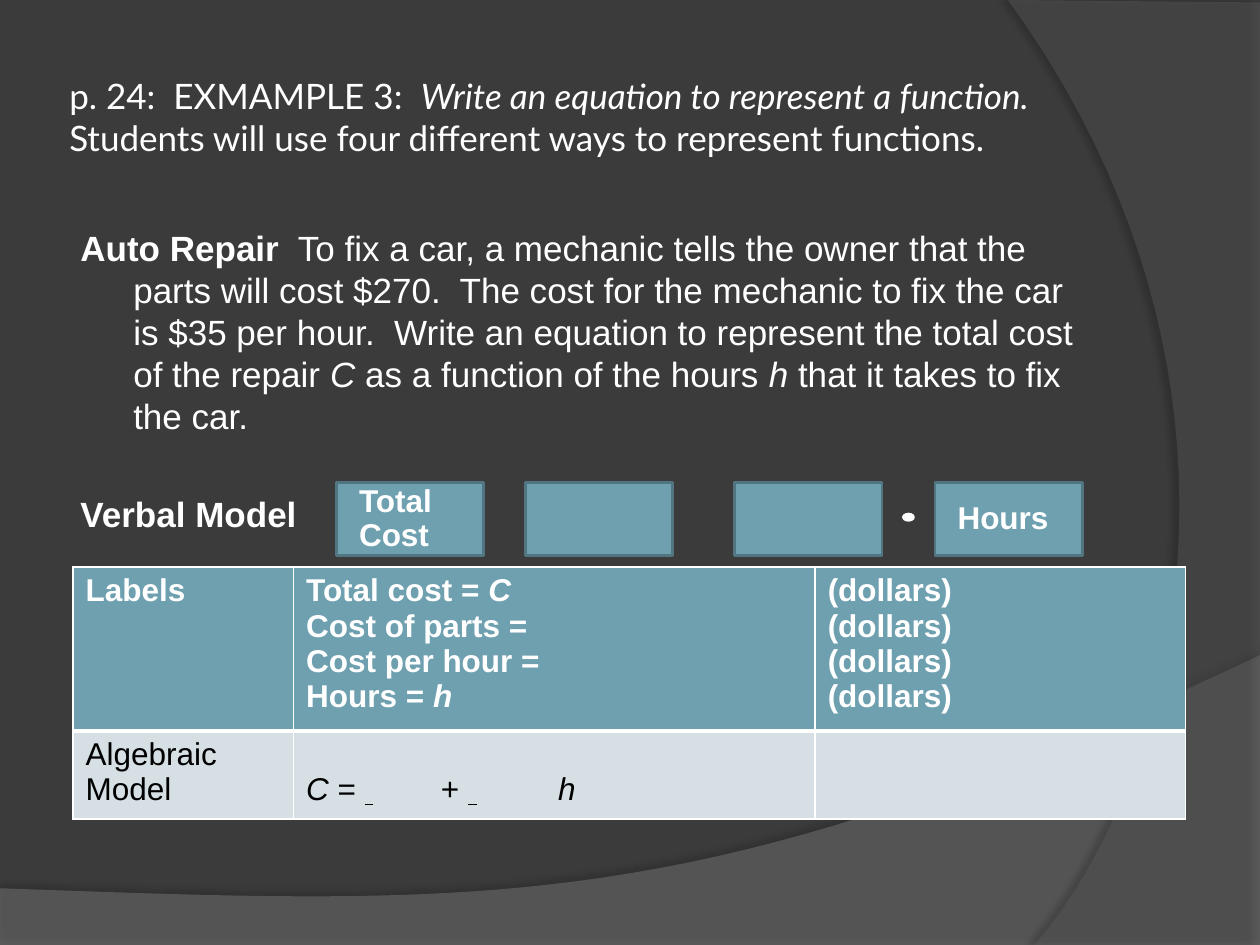
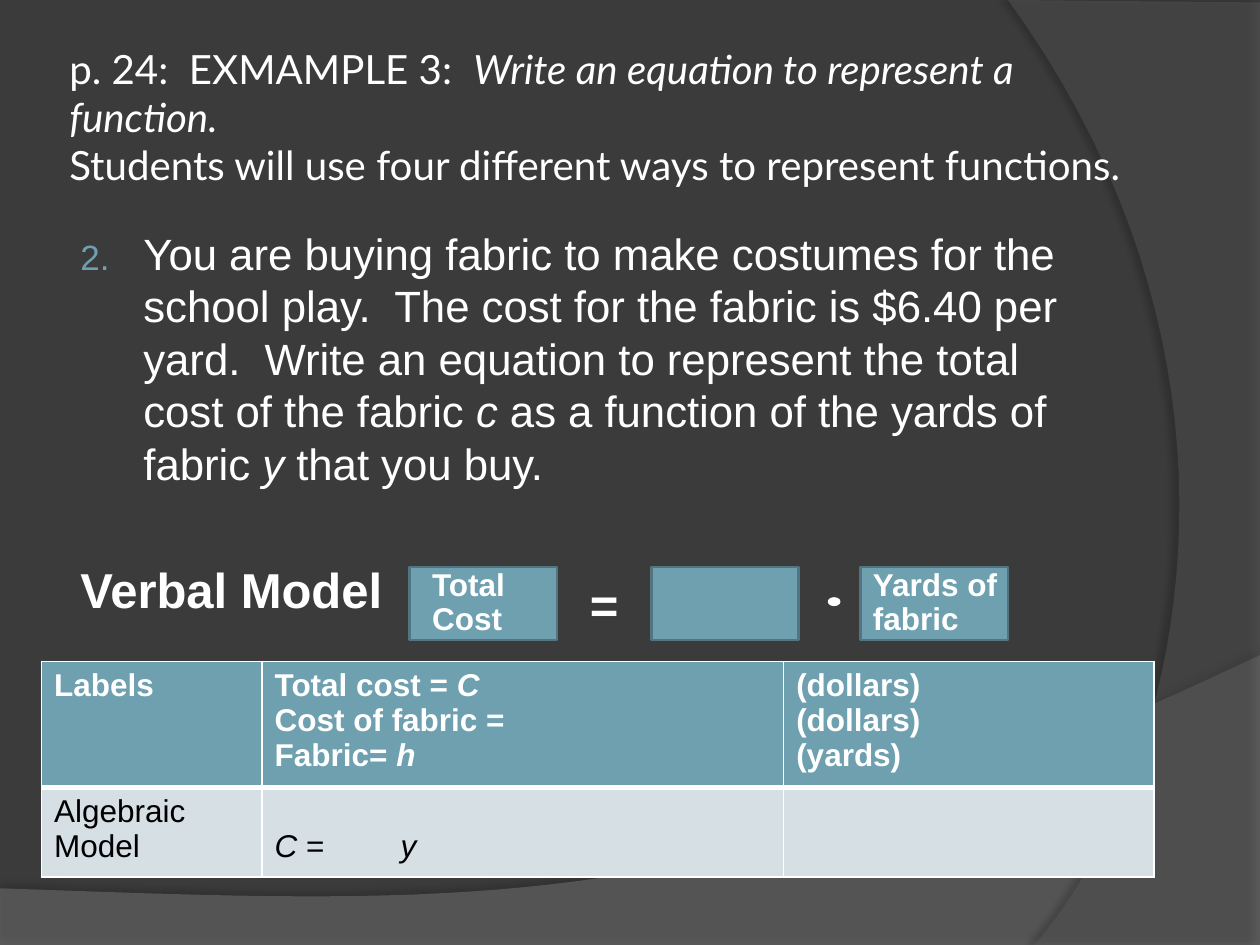
import dataclasses
import typing

import pptx
import pptx.dml.color
import pptx.enum.shapes
import pptx.enum.text
import pptx.oxml
import pptx.oxml.ns
import pptx.util

Inches = pptx.util.Inches
Pt = pptx.util.Pt

BACKGROUND, WHITE, BLACK = "3B3B3B", "FFFFFF", "000000"
TEAL, TEAL_EDGE, PALE = "6EA0B0", "517682", "D5DFE4"
TITLE_FONT, BODY_FONT = "Lato", "Arial"
BOX_WIDTH, BOX_HEIGHT = 1.17, 0.58
COLUMN_WIDTHS = (1.75, 4.14, 2.94)


@dataclasses.dataclass(frozen=True)
class Run:
    text: str
    bold: bool = False
    italic: bool = False
    underline: bool = False


@dataclasses.dataclass(frozen=True)
class Box:
    left: float
    label: str = ""
    inset: float = 0.18


@dataclasses.dataclass(frozen=True)
class Example:
    title_size: float
    title_width: float
    problem: list[Run]
    problem_size: float
    indent: float
    hanging: float
    number: int
    model_size: float
    model_gap: float
    boxes: list[Box]
    box_top: float
    shows_equals: bool
    dot_left: float
    table_left: float
    table_top: float
    row_heights: tuple[float, float]
    quantities: list[list[Run]]
    units: list[str]
    formula: list[Run]


EXAMPLES = [
    Example(
        title_size=20, title_width=8.17,
        problem=[
            Run("Auto Repair", bold=True),
            Run("  To fix a car, a mechanic tells the owner that the parts will cost $270.  "
                "The cost for the mechanic to fix the car is $35 per hour.  Write an equation "
                "to represent the total cost of the repair "),
            Run("C", italic=True),
            Run(" as a function of the hours "),
            Run("h", italic=True),
            Run(" that it takes to fix the car."),
        ],
        problem_size=20, indent=0.46, hanging=0.42, number=0,
        model_size=20, model_gap=32,
        boxes=[Box(2.67, "Total Cost"), Box(4.17), Box(5.83), Box(7.42, "Hours")],
        box_top=3.83, shows_equals=False, dot_left=7.17,
        table_left=0.58, table_top=4.5, row_heights=(1.21, 0.67),
        quantities=[
            [Run("Total cost = ", True), Run("C", True, True)],
            [Run("Cost of parts =", True)],
            [Run("Cost per hour =", True)],
            [Run("Hours = ", True), Run("h", True, True)],
        ],
        units=["(dollars)"] * 4,
        formula=[
            Run("C", italic=True), Run(" = "), Run(" \t", underline=True),
            Run(" + "), Run(" \t", underline=True), Run("h", italic=True),
        ],
    ),
    Example(
        title_size=23, title_width=8.83,
        problem=[
            Run("You are buying fabric to make costumes for the school play.  The cost for the "
                "fabric is $6.40 per yard.  Write an equation to represent the total cost of "
                "the fabric "),
            Run("c", italic=True),
            Run(" as a function of the yards of fabric "),
            Run("y", italic=True),
            Run(" that you buy."),
        ],
        problem_size=25, indent=0.54, hanging=0.5, number=2,
        model_size=28, model_gap=40,
        boxes=[Box(3.25, "Total Cost"), Box(5.17), Box(6.83, "Yards of fabric", 0.1)],
        box_top=4.5, shows_equals=True, dot_left=6.58,
        table_left=0.33, table_top=5.25, row_heights=(0.99, 0.71),
        quantities=[
            [Run("Total cost = ", True), Run("C", True, True)],
            [Run("Cost of fabric =", True)],
            [Run("Fabric= ", True), Run("h", True, True)],
        ],
        units=["(dollars)", "(dollars)", "(yards)"],
        formula=[Run("C ", italic=True), Run("= "), Run("\t"), Run("y", italic=True)],
    ),
]


def rgb(color: str) -> pptx.dml.color.RGBColor:
    return pptx.dml.color.RGBColor.from_string(color)


def element(xml: str) -> typing.Any:
    """Parse one drawing element, adding its namespace."""
    name, rest = xml[1:].split(" ", 1)
    return pptx.oxml.parse_xml(f"<{name} {pptx.oxml.ns.nsdecls('a')} {rest}")


def add_runs(paragraph: typing.Any, runs: list[Run], size: float,
             color: str = WHITE, font: str = BODY_FONT) -> None:
    for item in runs:
        run = paragraph.add_run()
        run.text = item.text
        run.font.name, run.font.size = font, Pt(size)
        run.font.bold, run.font.italic = item.bold, item.italic
        run.font.underline = item.underline
        run.font.color.rgb = rgb(color)


def add_text_frame(slide: typing.Any, left: float, top: float,
                   width: float, height: float) -> typing.Any:
    box = slide.shapes.add_textbox(Inches(left), Inches(top), Inches(width), Inches(height))
    box.text_frame.word_wrap = True
    return box.text_frame


def set_indent(paragraph: typing.Any, left: float, first: float) -> typing.Any:
    properties = paragraph._p.get_or_add_pPr()
    properties.set("marL", str(Inches(left)))
    properties.set("indent", str(Inches(first)))
    return properties


# Curved background bands

def curve(start: tuple, first: tuple, second: tuple, end: tuple, steps: int = 40) -> list[tuple]:
    """Points along a cubic curve, without its start."""
    points = []
    for step in range(1, steps + 1):
        t = step / steps
        weights = ((1 - t) ** 3, 3 * t * (1 - t) ** 2, 3 * t * t * (1 - t), t ** 3)
        corners = (start, first, second, end)
        points.append(tuple(sum(w * c[axis] for w, c in zip(weights, corners))
                            for axis in (0, 1)))
    return points


def add_band(slide: typing.Any, points: list[tuple], color: str, opacity: int,
             shadow_opacity: int, distance: float, direction: int) -> None:
    vertices = [(Inches(x), Inches(y)) for x, y in points]
    builder = slide.shapes.build_freeform(*vertices[0])
    builder.add_line_segments(vertices[1:], close=True)
    band = builder.convert_to_shape()
    band.fill.solid()
    band.fill.fore_color.rgb = rgb(color)
    band.line.fill.background()
    band.shadow.inherit = False
    properties = band._element.spPr
    fill_color = properties.find(".//" + pptx.oxml.ns.qn("a:srgbClr"))
    fill_color.append(element(f'<a:alpha val="{opacity * 1000}"/>'))
    properties.find(pptx.oxml.ns.qn("a:effectLst")).append(element(
        f'<a:outerShdw blurRad="{Pt(4)}" dist="{Pt(distance)}" dir="{direction * 60000}" '
        f'algn="ctr" rotWithShape="0"><a:srgbClr val="{BLACK}">'
        f'<a:alpha val="{shadow_opacity * 1000}"/></a:srgbClr></a:outerShdw>'))


def add_background(slide: typing.Any) -> None:
    bottom = [(0, 7.05), (0, 7.5), (10, 7.5), (10, 5.2)]
    bottom += curve((10, 5.2), (5.59, 7.29), (3.91, 7.19), (0, 7.05))
    add_band(slide, bottom, "7F7F7F", 45, 35, 3.5, 270)
    side = [(10, 0.02), (10, 7.5), (8.21, 7.5)]
    side += curve((8.21, 7.5), (9.35, 6.19), (10.18, 3), (8, 0))
    add_band(slide, side, "5E5E5E", 40, 45, 4, 180)


# Title and problem text

def add_title(slide: typing.Any, example: Example) -> None:
    frame = add_text_frame(slide, 0.5, 0.3, example.title_width, 1.25)
    frame.vertical_anchor = pptx.enum.text.MSO_ANCHOR.MIDDLE
    frame.margin_left = frame.margin_right = Inches(0.05)
    paragraph = frame.paragraphs[0]
    add_runs(paragraph, [
        Run("p. 24:  EXMAMPLE 3:  "),
        Run("Write an equation to represent a function.", italic=True),
    ], example.title_size, font=TITLE_FONT)
    paragraph.add_line_break()
    add_runs(paragraph, [Run("Students will use four different ways to represent functions.")],
             example.title_size, font=TITLE_FONT)


def add_body(slide: typing.Any, example: Example) -> None:
    frame = add_text_frame(slide, 0.5, 1.75, 8.17, 4.95)
    problem = frame.paragraphs[0]
    properties = set_indent(problem, example.indent, -example.hanging)
    if example.number:
        properties.append(element(f'<a:buClr ><a:srgbClr val="{TEAL}"/></a:buClr>'))
        properties.append(element('<a:buSzPct val="80000"/>'))
        properties.append(element(
            f'<a:buAutoNum type="arabicPeriod" startAt="{example.number}"/>'))
    add_runs(problem, example.problem, example.problem_size)

    model = frame.add_paragraph()
    set_indent(model, 0.04, 0)
    model.space_before = Pt(example.model_gap)
    add_runs(model, [Run("Verbal Model", bold=True)], example.model_size)


# Verbal model boxes

def add_filled(slide: typing.Any, kind: typing.Any, left: float, top: float, width: float,
               height: float, fill: str, edge: str) -> typing.Any:
    shape = slide.shapes.add_shape(kind, Inches(left), Inches(top),
                                   Inches(width), Inches(height))
    shape.shadow.inherit = False
    shape.fill.solid()
    shape.fill.fore_color.rgb = rgb(fill)
    shape.line.color.rgb = rgb(edge)
    shape.line.width = Pt(1.5)
    return shape


def add_verbal_model(slide: typing.Any, example: Example) -> None:
    kinds = pptx.enum.shapes.MSO_SHAPE
    middle = pptx.enum.text.MSO_ANCHOR.MIDDLE
    for box in example.boxes:
        shape = add_filled(slide, kinds.RECTANGLE, box.left, example.box_top,
                           BOX_WIDTH, BOX_HEIGHT, TEAL, TEAL_EDGE)
        if box.label:
            frame = shape.text_frame
            frame.word_wrap = True
            frame.vertical_anchor = middle
            frame.margin_left = Inches(box.inset)
            frame.margin_top = frame.margin_right = frame.margin_bottom = 0
            paragraph = frame.paragraphs[0]
            paragraph.alignment = pptx.enum.text.PP_ALIGN.LEFT
            paragraph.line_spacing = 0.9
            add_runs(paragraph, [Run(box.label, bold=True)], 18)
    add_filled(slide, kinds.OVAL, example.dot_left, example.box_top + 0.25,
               0.08, 0.05, WHITE, WHITE)
    if example.shows_equals:
        # Centred in the gap between the first two boxes
        gap_left = example.boxes[0].left + BOX_WIDTH
        frame = add_text_frame(slide, gap_left, example.box_top,
                               example.boxes[1].left - gap_left, BOX_HEIGHT)
        frame.vertical_anchor = middle
        frame.paragraphs[0].alignment = pptx.enum.text.PP_ALIGN.CENTER
        add_runs(frame.paragraphs[0], [Run("=", bold=True)], example.model_size)


# Labels and algebraic model table

def style_cell(cell: typing.Any, fill: str, top: float, bottom: float) -> None:
    properties = cell._tc.get_or_add_tcPr()
    for side, width in (("L", 1), ("R", 1), ("T", top), ("B", bottom)):
        properties.append(element(
            f'<a:ln{side} w="{Pt(width)}"><a:solidFill><a:srgbClr val="{WHITE}"/>'
            f'</a:solidFill></a:ln{side}>'))
    cell.fill.solid()
    cell.fill.fore_color.rgb = rgb(fill)


def add_model_table(slide: typing.Any, example: Example) -> None:
    frame = slide.shapes.add_table(2, 3, Inches(example.table_left), Inches(example.table_top),
                                   Inches(sum(COLUMN_WIDTHS)), Inches(sum(example.row_heights)))
    table = frame.table
    for column, width in zip(table.columns, COLUMN_WIDTHS):
        column.width = Inches(width)
    contents = [
        [[[Run("Labels", bold=True)]], example.quantities,
         [[Run(unit, bold=True)] for unit in example.units]],
        [[[Run("Algebraic Model")]], [example.formula], []],
    ]
    looks = [(TEAL, WHITE, 1, 3), (PALE, BLACK, 3, 1)]
    for row, (lines_by_cell, look) in enumerate(zip(contents, looks)):
        fill, color, top, bottom = look
        table.rows[row].height = Inches(example.row_heights[row])
        for column, lines in enumerate(lines_by_cell):
            cell = table.cell(row, column)
            style_cell(cell, fill, top, bottom)
            for index, runs in enumerate(lines):
                text = cell.text_frame
                paragraph = text.add_paragraph() if index else text.paragraphs[0]
                add_runs(paragraph, runs, 18, color)
    # The formula sits level with the second line of its row heading, with wide tabs
    formula = table.cell(1, 1)
    formula.margin_top = Inches(0.33)
    properties = formula.text_frame.paragraphs[0]._p.get_or_add_pPr()
    properties.set("defTabSz", str(Inches(1)))


def main() -> None:
    presentation = pptx.Presentation()
    presentation.slide_width, presentation.slide_height = Inches(10), Inches(7.5)
    background = presentation.slide_master.background.fill
    background.solid()
    background.fore_color.rgb = rgb(BACKGROUND)
    for example in EXAMPLES:
        slide = presentation.slides.add_slide(presentation.slide_layouts[6])
        add_background(slide)
        add_title(slide, example)
        add_body(slide, example)
        add_verbal_model(slide, example)
        add_model_table(slide, example)
    presentation.save("out.pptx")


if __name__ == "__main__":
    main()
